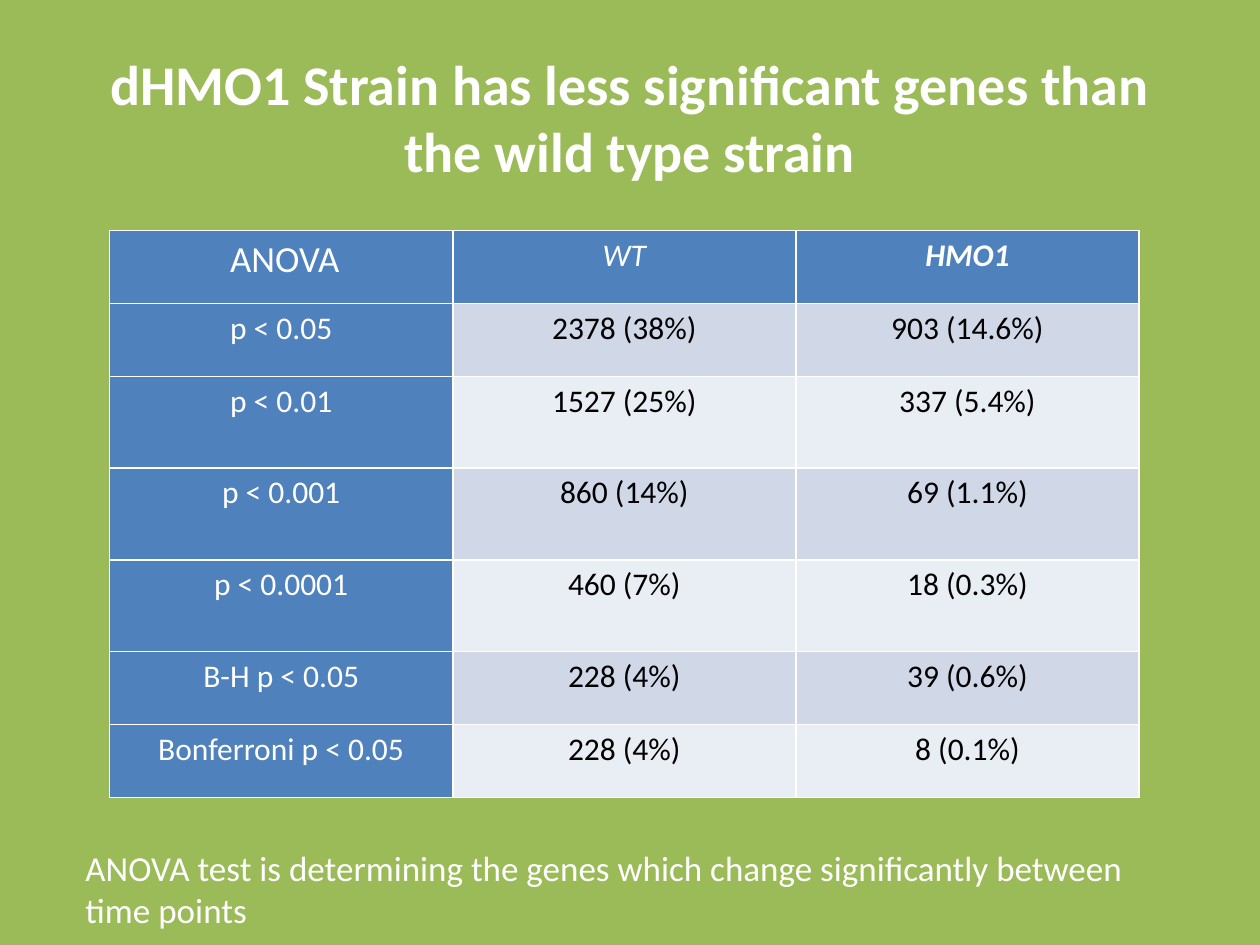
import pptx
import pptx.dml.color
import pptx.enum.text
import pptx.oxml
import pptx.oxml.ns
import pptx.util
from pptx.util import Inches

RGBColor = pptx.dml.color.RGBColor
PP_ALIGN = pptx.enum.text.PP_ALIGN
MSO_ANCHOR = pptx.enum.text.MSO_ANCHOR

GREEN = RGBColor(0x9B, 0xBB, 0x59)
BLUE = RGBColor(0x4F, 0x81, 0xBD)
BAND_DARK = RGBColor(0xD0, 0xD8, 0xE8)
BAND_LIGHT = RGBColor(0xE9, 0xED, 0xF4)
WHITE = RGBColor(0xFF, 0xFF, 0xFF)
BLACK = RGBColor(0, 0, 0)

FONT = "Calibri"
TITLE = "dHMO1 Strain has less significant genes than the wild type strain"
NOTE = ("ANOVA test is determining the genes which change significantly "
        "between time points")
HEADER = [
    [(" ", 18, BLACK, False, False), ("ANOVA", 21, WHITE, False, False)],
    [("WT", 18, WHITE, False, True)],
    [("HMO1", 18, WHITE, True, True)],
]
RESULTS = [
    ("p < 0.05", "2378 (38%)", "903 (14.6%)"),
    ("p < 0.01", "1527 (25%)", "337 (5.4%)"),
    ("p < 0.001", "860 (14%)", "69 (1.1%)"),
    ("p < 0.0001", "460 (7%)", "18 (0.3%)"),
    ("B-H p < 0.05", "228 (4%)", "39 (0.6%)"),
    ("Bonferroni p < 0.05", "228 (4%)", "8 (0.1%)"),
]
ROW_HEIGHTS = [0.58, 0.58, 0.73, 0.73, 0.73, 0.58, 0.58]


def add_run(p, text, size, color, bold=False, italic=False):
    """Append one formatted run to a paragraph."""
    r = p.add_run()
    r.text = text
    r.font.name = FONT
    r.font.size = pptx.util.Pt(size)
    r.font.color.rgb = color
    r.font.bold = bold
    r.font.italic = italic


def add_borders(cell, color, width):
    """Draw a solid line on all four sides of a table cell."""
    tc_pr = cell._tc.get_or_add_tcPr()
    for side in ("lnL", "lnR", "lnT", "lnB"):
        tc_pr.append(pptx.oxml.parse_xml(
            f'<a:{side} {pptx.oxml.ns.nsdecls("a")} w="{pptx.util.Pt(width)}">'
            f'<a:solidFill><a:srgbClr val="{color}"/></a:solidFill></a:{side}>'))


def fill_cell(cell, runs, color):
    """Format a table cell and write its centred runs."""
    cell.margin_left = cell.margin_right = Inches(0.07)
    cell.margin_top = cell.margin_bottom = 0
    add_borders(cell, WHITE, 1)
    cell.fill.solid()
    cell.fill.fore_color.rgb = color
    p = cell.text_frame.paragraphs[0]
    p.alignment = PP_ALIGN.CENTER
    p.line_spacing = 1.15
    for run in runs:
        add_run(p, *run)


def place_title(slide, left, top, width, height):
    """Move the title placeholder into its box and write the title."""
    sp = slide.shapes.title
    sp.left, sp.top, sp.width, sp.height = left, top, width, height
    tf = sp.text_frame
    tf.vertical_anchor = MSO_ANCHOR.MIDDLE
    p = tf.paragraphs[0]
    p.alignment = PP_ALIGN.CENTER
    add_run(p, TITLE, 32, WHITE, bold=True)


def add_results_table(slide, left, top, width, height):
    """Add the table of significant genes per threshold and strain."""
    table = slide.shapes.add_table(
        len(RESULTS) + 1, len(HEADER), left, top, width, height).table
    for column in table.columns:
        column.width = width // len(HEADER)
    for row, row_height in zip(table.rows, ROW_HEIGHTS):
        row.height = int(height * row_height / sum(ROW_HEIGHTS))
    for col, runs in enumerate(HEADER):
        fill_cell(table.cell(0, col), runs, BLUE)
    for row, values in enumerate(RESULTS, start=1):
        band = BAND_DARK if row % 2 else BAND_LIGHT
        for col, value in enumerate(values):
            text_color, color = (BLACK, band) if col else (WHITE, BLUE)
            fill_cell(table.cell(row, col), [(value, 18, text_color)], color)


def add_note(slide, left, top, width, height):
    """Add the explanatory text below the table."""
    tf = slide.shapes.add_textbox(left, top, width, height).text_frame
    tf.word_wrap = True
    tf.auto_size = pptx.enum.text.MSO_AUTO_SIZE.SHAPE_TO_FIT_TEXT
    add_run(tf.paragraphs[0], NOTE, 20, WHITE)


def main():
    """Build the slide and save it."""
    prs = pptx.Presentation()
    prs.slide_width, prs.slide_height = Inches(10), Inches(7.5)
    slide = prs.slides.add_slide(prs.slide_layouts.get_by_name("Title Only"))
    slide.background.fill.solid()
    slide.background.fill.fore_color.rgb = GREEN
    add_results_table(slide, Inches(0.87), Inches(1.83), Inches(8.17), Inches(4.5))
    place_title(slide, Inches(0.5), Inches(0.3), Inches(9), Inches(1.25))
    add_note(slide, Inches(0.58), Inches(6.67), Inches(8.75), Inches(0.8))
    prs.save("out.pptx")


if __name__ == "__main__":
    main()
